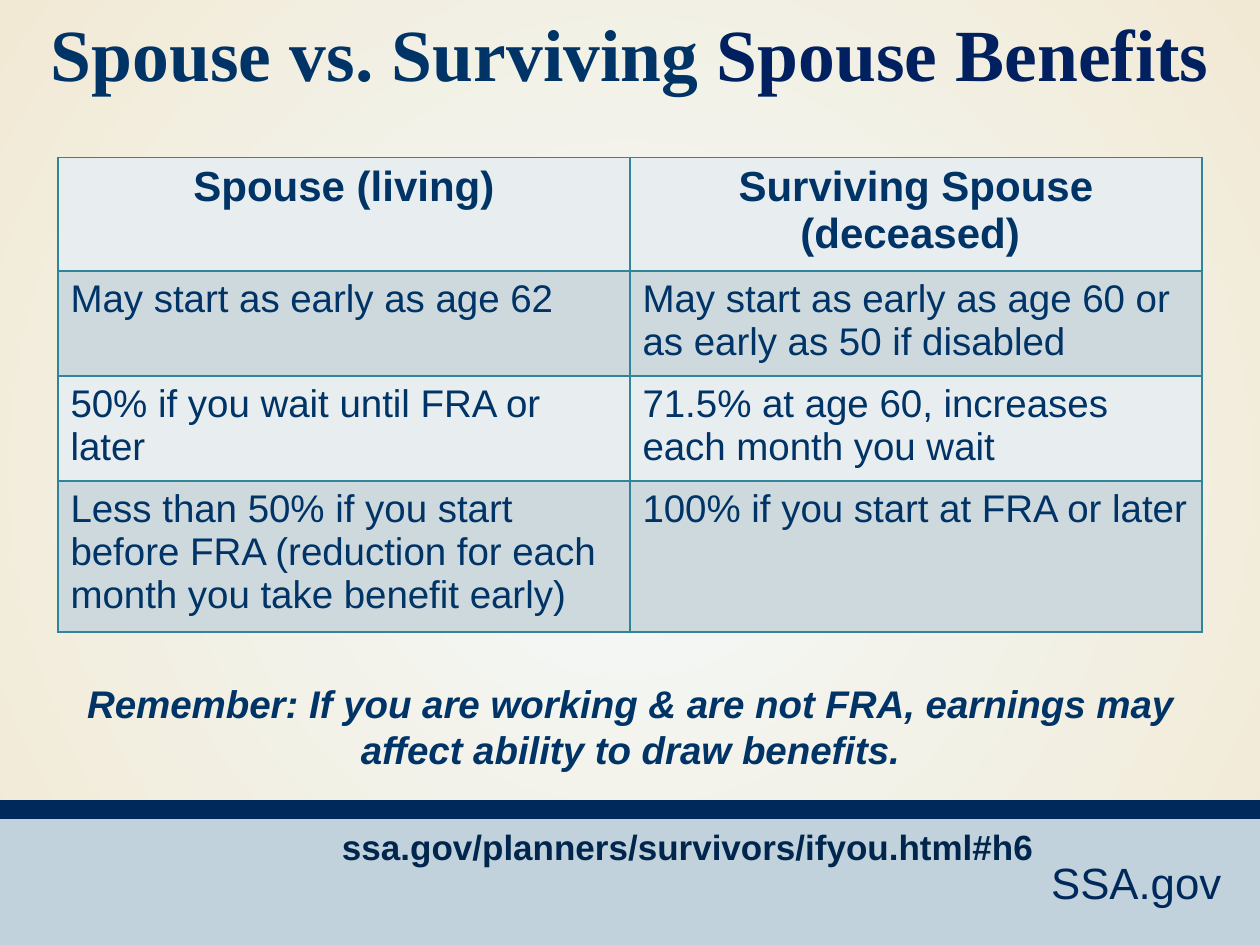
from dataclasses import dataclass

from lxml.etree import SubElement
from pptx import Presentation
from pptx.dml.color import RGBColor as Color
from pptx.enum.shapes import MSO_SHAPE as Preset
from pptx.enum.text import MSO_ANCHOR as Anchor, PP_ALIGN as Align
from pptx.oxml.ns import qn
from pptx.util import Inches, Pt

WIDTH, HEIGHT = 10, 7.5


@dataclass(frozen=True)
class Theme:
    heading_font: str = "Times New Roman"
    body_font: str = "Arial"
    navy: str = "003366"
    title_accent: str = "002060"
    footer_navy: str = "00295B"
    footer_blue: str = "C1D2DC"
    link_navy: str = "00264D"
    border: str = "31859B"
    row_fills: tuple = ("E8EDEF", "CED9DE")
    background: tuple = ("F3FAFB", "F2E9D5")
    title_size: int = 42
    site_size: int = 25
    header_size: int = 24
    body_size: int = 22
    link_size: int = 20


THEME = Theme()

ROWS = [
    ("Spouse (living)", "Surviving Spouse (deceased) "),
    ("May start as early as age 62",
     "May start as early as age 60 or as early as 50 if disabled"),
    ("50% if you wait until FRA or later",
     "71.5% at age 60, increases each month you wait"),
    ("Less than 50% if you start before FRA (reduction for each month you take benefit early)",
     "100% if you start at FRA or later"),
]
ROW_HEIGHTS = (0.85, 0.78, 0.78, 1.13)


def add_run(paragraph, text, size, color, font=THEME.body_font, bold=False, italic=False):
    run = paragraph.add_run()
    run.text = text
    run.font.name = font
    run.font.size = Pt(size)
    run.font.bold = bold
    run.font.italic = italic
    run.font.color.rgb = Color.from_string(color)


def add_text(slide, box, align=Align.CENTER):
    """Add a wrapping text box and return its first paragraph."""
    shape = slide.shapes.add_textbox(*map(Inches, box))
    frame = shape.text_frame
    frame.word_wrap = True
    frame.vertical_anchor = Anchor.MIDDLE
    paragraph = frame.paragraphs[0]
    paragraph.alignment = align
    return paragraph


def add_band(slide, top, height, color):
    shape = slide.shapes.add_shape(
        Preset.RECTANGLE, 0, Inches(top), Inches(WIDTH), Inches(height))
    shape.shadow.inherit = False
    shape.fill.solid()
    shape.fill.fore_color.rgb = Color.from_string(color)
    shape.line.fill.background()


def set_background(slide):
    """Radial gradient spreading from the middle of the slide."""
    fill = slide.background.fill
    fill.gradient()
    for stop, color in zip(fill.gradient_stops, THEME.background):
        stop.color.rgb = Color.from_string(color)
    gradient = slide.element.find(".//" + qn("a:gradFill"))
    gradient.remove(gradient.find(qn("a:lin")))
    radial = SubElement(gradient, qn("a:path"), path="circle")
    SubElement(radial, qn("a:fillToRect"), dict.fromkeys("ltrb", "50000"))


def set_borders(cell):
    properties = cell._tc.get_or_add_tcPr()
    for position, side in enumerate(("lnL", "lnR", "lnT", "lnB")):
        line = SubElement(properties, qn(f"a:{side}"), w=str(Pt(1)))
        fill = SubElement(line, qn("a:solidFill"))
        SubElement(fill, qn("a:srgbClr"), val=THEME.border)
        properties.insert(position, line)  # borders come before the fill


def add_comparison(slide, left, top, width):
    columns = len(ROWS[0])
    table = slide.shapes.add_table(
        len(ROWS), columns, Inches(left), Inches(top),
        Inches(width), Inches(sum(ROW_HEIGHTS))).table
    for column in table.columns:
        column.width = Inches(width / columns)
    for index, texts in enumerate(ROWS):
        table.rows[index].height = Inches(ROW_HEIGHTS[index])
        header = index == 0
        for cell, text in zip(table.rows[index].cells, texts):
            cell.fill.solid()
            cell.fill.fore_color.rgb = Color.from_string(THEME.row_fills[index % 2])
            set_borders(cell)
            paragraph = cell.text_frame.paragraphs[0]
            paragraph.alignment = Align.CENTER if header else Align.LEFT
            size = THEME.header_size if header else THEME.body_size
            add_run(paragraph, text, size, THEME.navy, bold=header)


def main():
    presentation = Presentation()
    presentation.slide_width = Inches(WIDTH)
    presentation.slide_height = Inches(HEIGHT)
    slide = presentation.slides.add_slide(presentation.slide_layouts[6])
    set_background(slide)

    # Footer bands and site name
    add_band(slide, 6.45, HEIGHT - 6.45, THEME.footer_blue)
    add_band(slide, 6.35, 0.15, THEME.footer_navy)
    site = add_text(slide, (6.72, 6.74, 3.07, 0.52), Align.RIGHT)
    add_run(site, "SSA.gov", THEME.site_size, THEME.footer_navy)

    # Title
    title = add_text(slide, (0, 0, WIDTH, 0.82))
    for text, color in (("Spouse vs. Surviving ", THEME.navy),
                        ("Spouse Benefits", THEME.title_accent)):
        add_run(title, text, THEME.title_size, color, THEME.heading_font, bold=True)

    # Comparison table, centred between equal margins
    margin = 0.46
    add_comparison(slide, margin, 1.25, WIDTH - 2 * margin)

    # Reminder and link
    reminder = add_text(slide, (0.21, 5.34, 9.59, 0.84))
    add_run(reminder,
            "Remember: If you are working & are not FRA, earnings may affect "
            "ability to draw benefits.",
            THEME.body_size, THEME.navy, bold=True, italic=True)
    link = add_text(slide, (margin, 6.5, WIDTH, 0.44))
    add_run(link, "ssa.gov/planners/survivors/ifyou.html#h6",
            THEME.link_size, THEME.link_navy, bold=True)

    presentation.save("out.pptx")


if __name__ == "__main__":
    main()
